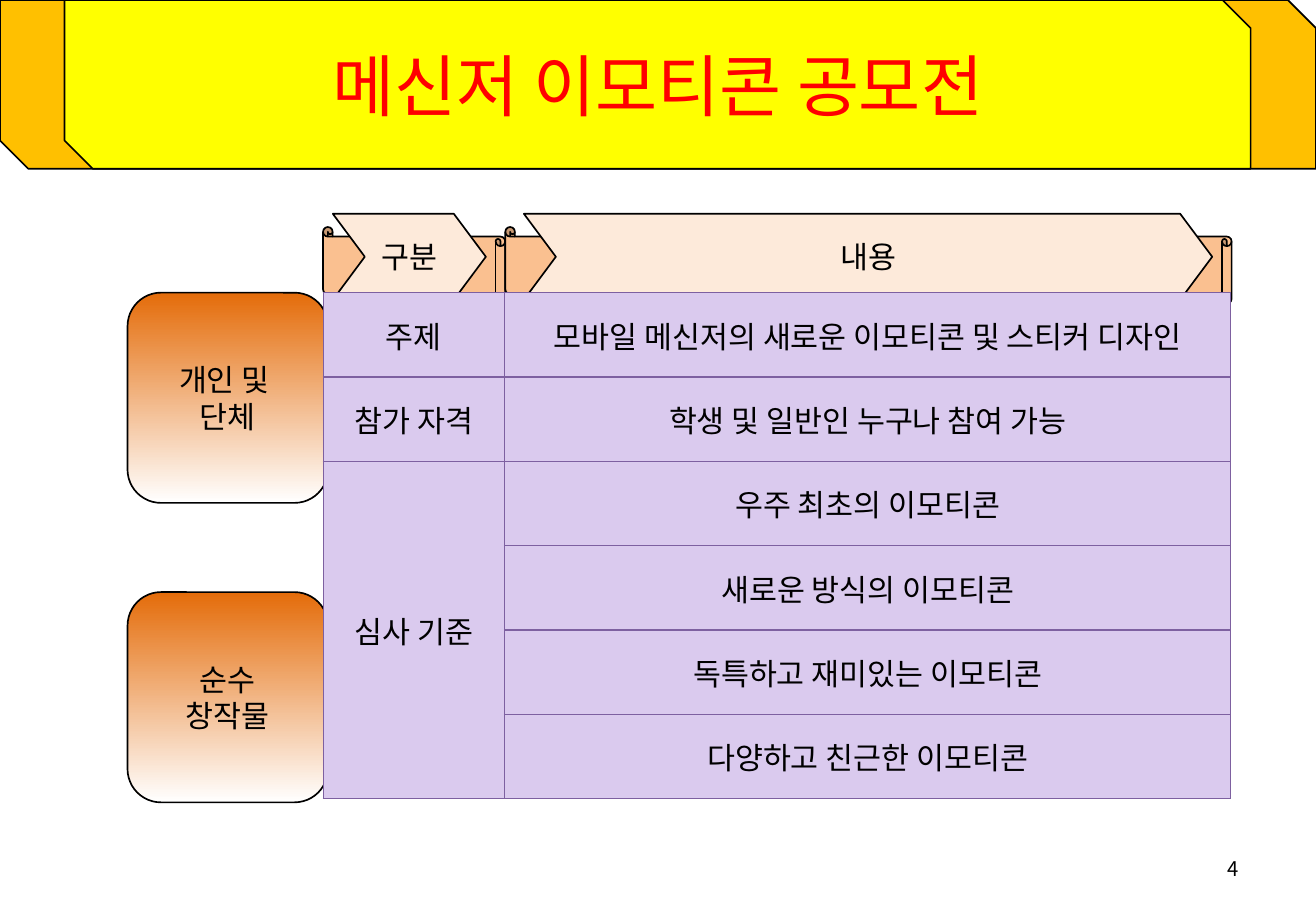
from dataclasses import dataclass

from lxml.etree import SubElement
from pptx import Presentation
from pptx.dml.color import RGBColor
from pptx.enum.shapes import MSO_SHAPE
from pptx.enum.text import MSO_ANCHOR, PP_ALIGN
from pptx.oxml.ns import qn
from pptx.shapes.autoshape import Shape
from pptx.shapes.shapetree import SlideShapes
from pptx.table import _Cell
from pptx.text.text import TextFrame
from pptx.util import Pt

FONT = "Noto Sans CJK KR"
BLACK = RGBColor(0, 0, 0)
WHITE = RGBColor(255, 255, 255)
RED = RGBColor(255, 0, 0)
GOLD = RGBColor(0xFF, 0xC0, 0x00)
YELLOW = RGBColor(0xFF, 0xFF, 0x00)
PEACH = RGBColor(0xFA, 0xC0, 0x90)
CREAM = RGBColor(0xFD, 0xEA, 0xDA)
ORANGE = RGBColor(0xE4, 0x6C, 0x0A)
LILAC = RGBColor(0xDA, 0xCA, 0xEE)
PURPLE = "7D60A0"

LEFT, TOP, ROW = 191.5, 173.5, 50
COLS = (107.5, 430.5)
CELLS = (
    ("주제", "모바일 메신저의 새로운 이모티콘 및 스티커 디자인"),
    ("참가 자격", "학생 및 일반인 누구나 참여 가능"),
    ("심사 기준", "우주 최초의 이모티콘"),
    ("", "새로운 방식의 이모티콘"),
    ("", "독특하고 재미있는 이모티콘"),
    ("", "다양하고 친근한 이모티콘"),
)


@dataclass(frozen=True)
class Box:
    left: float
    top: float
    width: float
    height: float

    def lengths(self) -> tuple[Pt, Pt, Pt, Pt]:
        return Pt(self.left), Pt(self.top), Pt(self.width), Pt(self.height)


@dataclass(frozen=True)
class Header:
    text: str
    scroll: Box
    arrow: Box


@dataclass(frozen=True)
class Card:
    text: str
    top: float


BANDS = ((Box(0, 0, 780, 100), GOLD), (Box(38.3, 0, 703, 100), YELLOW))
HEADERS = (
    Header("구분", Box(LEFT, 134.6, 108, 45.4), Box(197.3, 126.7, 90.7, 51)),
    Header("내용", Box(299.5, 134.6, 430.5, 45.4), Box(310.5, 126.7, 408, 51)),
)
CARDS = (Card("개인 및 \n단체", TOP), Card("순수\n창작물", 351))


def write(frame: TextFrame, text: str, size: float = 18,
          color: RGBColor = BLACK, align: PP_ALIGN = PP_ALIGN.CENTER) -> None:
    frame.text = text
    frame.word_wrap = True
    frame.vertical_anchor = MSO_ANCHOR.MIDDLE
    for para in frame.paragraphs:
        para.alignment = align
        para.font.size = Pt(size)
        para.font.color.rgb = color
        para.font.name = FONT
        props = para._p.pPr.find(qn("a:defRPr"))
        SubElement(props, qn("a:ea"), typeface=FONT)


def add_label(shapes: SlideShapes, box: Box, text: str, size: float,
              color: RGBColor, align: PP_ALIGN) -> None:
    label = shapes.add_textbox(*box.lengths())
    write(label.text_frame, text, size, color, align)


def add_form(shapes: SlideShapes, kind: MSO_SHAPE, box: Box,
             fill: RGBColor | None = None) -> Shape:
    """Add a black-outlined shape; without a fill it fades orange to white."""
    form = shapes.add_shape(kind, *box.lengths())
    form.shadow.inherit = False
    form.line.color.rgb = BLACK
    form.line.width = Pt(1)
    if fill is None:
        form.fill.gradient()
        form.fill.gradient_angle = 270
        for stop, color in zip(form.fill.gradient_stops, (ORANGE, WHITE)):
            stop.color.rgb = color
    else:
        form.fill.solid()
        form.fill.fore_color.rgb = fill
    return form


def add_header(shapes: SlideShapes, head: Header) -> None:
    scroll = add_form(shapes, MSO_SHAPE.HORIZONTAL_SCROLL, head.scroll, PEACH)
    scroll._element.spPr.xfrm.set("flipH", "1")
    arrow = add_form(shapes, MSO_SHAPE.CHEVRON, head.arrow, CREAM)
    arrow.adjustments[0] = 0.372
    write(arrow.text_frame, head.text)


def style_cell(cell: _Cell) -> None:
    """Draw the borders, then the fill that must follow them."""
    props = cell._tc.get_or_add_tcPr()
    for side in ("lnL", "lnR", "lnT", "lnB"):
        line = SubElement(props, qn(f"a:{side}"), w=str(Pt(0.75)))
        solid = SubElement(line, qn("a:solidFill"))
        SubElement(solid, qn("a:srgbClr"), val=PURPLE)
    cell.fill.solid()
    cell.fill.fore_color.rgb = LILAC


def add_grid(shapes: SlideShapes) -> None:
    box = Box(LEFT, TOP, sum(COLS), ROW * len(CELLS))
    table = shapes.add_table(len(CELLS), len(COLS), *box.lengths()).table
    table.first_row = table.horz_banding = False
    for col, width in zip(table.columns, COLS):
        col.width = Pt(width)
    for row, texts in enumerate(CELLS):
        table.rows[row].height = Pt(ROW)
        for col, text in enumerate(texts):
            cell = table.cell(row, col)
            style_cell(cell)
            if text:
                write(cell.text_frame, text)
                cell.vertical_anchor = MSO_ANCHOR.MIDDLE
    table.cell(2, 0).merge(table.cell(len(CELLS) - 1, 0))


def main() -> None:
    deck = Presentation()
    deck.slide_width, deck.slide_height = Pt(780), Pt(540)
    shapes = deck.slides.add_slide(deck.slide_layouts[6]).shapes
    for box, color in BANDS:
        add_form(shapes, MSO_SHAPE.SNIP_2_DIAG_RECTANGLE, box, color)
    add_label(shapes, Box(39, 5, 702, 90), "메신저 이모티콘 공모전", 40, RED,
              PP_ALIGN.CENTER)
    add_label(shapes, Box(559, 500.5, 182, 28.75), "4", 12, BLACK,
              PP_ALIGN.RIGHT)
    for head in HEADERS:
        add_header(shapes, head)
    for card in CARDS:
        box = Box(75.6, card.top, 118.8, 124.6)
        form = add_form(shapes, MSO_SHAPE.ROUNDED_RECTANGLE, box)
        write(form.text_frame, card.text)
    add_grid(shapes)
    deck.save("out.pptx")


if __name__ == "__main__":
    main()
